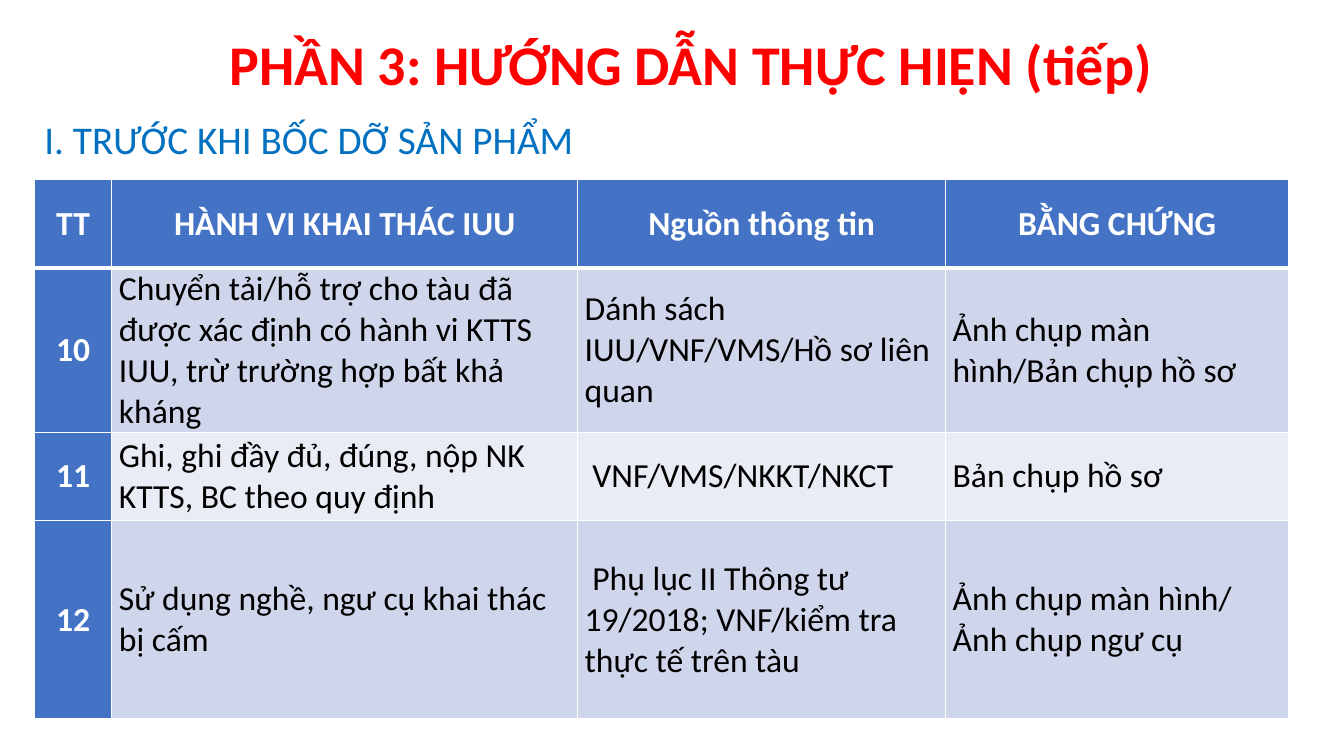
import pptx
import pptx.util
import pptx.dml.color
import pptx.enum.text
import pptx.oxml.ns
from lxml import etree
from pptx.util import Inches, Pt

COLORS = {
    "white": "FFFFFF", "black": "000000", "red": "FF0000", "sky": "0070C0",
    "blue": "4472C4", "dark": "CFD5EA", "light": "E9EBF5",
}
ALIGN = pptx.enum.text.PP_ALIGN
ANCHOR = pptx.enum.text.MSO_ANCHOR
COLS = [0.77, 4.62, 3.65, 3.4]
ROWS = [0.88, 1.48, 0.88, 1.96]
CELLS = [
    ["TT", "HÀNH VI KHAI THÁC IUU", "Nguồn thông tin", "BẰNG CHỨNG"],
    ["10", "Chuyển tải/hỗ trợ cho tàu đã được xác định có hành vi KTTS IUU, "
     "trừ trường hợp bất khả kháng",
     "Dánh sách IUU/VNF/VMS/Hồ sơ liên quan",
     "Ảnh chụp màn hình/Bản chụp hồ sơ"],
    ["11", "Ghi, ghi đầy đủ, đúng, nộp NK KTTS, BC theo quy định",
     " VNF/VMS/NKKT/NKCT", "Bản chụp hồ sơ"],
    ["12", "Sử dụng nghề, ngư cụ khai thác bị cấm",
     " Phụ lục II Thông tư 19/2018; VNF/kiểm tra thực tế trên tàu",
     "Ảnh chụp màn hình/ Ảnh chụp ngư cụ"],
]


def rgb(name):
    return pptx.dml.color.RGBColor.from_string(COLORS[name])


def write(frame, text, size=24, color="black", bold=False,
          align=ALIGN.LEFT, before=0, line=1.0):
    """Fill a text frame with one formatted paragraph and return it."""
    frame.word_wrap = True
    para = frame.paragraphs[0]
    para.alignment = align
    para.space_before = Pt(before)
    para.line_spacing = line
    run = para.add_run()
    run.text = text
    font = run.font
    font.name, font.size, font.bold = "Calibri", Pt(size), bold
    font.color.rgb = rgb(color)
    return para


def place(shape, left, top, width, height, anchor):
    shape.left, shape.top = Inches(left), Inches(top)
    shape.width, shape.height = Inches(width), Inches(height)
    shape.text_frame.auto_size = pptx.enum.text.MSO_AUTO_SIZE.NONE
    shape.text_frame.vertical_anchor = anchor


def plain(para):
    """Remove the bullet and its indent."""
    props = para._p.get_or_add_pPr()
    props.set("marL", "0")
    props.set("indent", "0")
    etree.SubElement(props, pptx.oxml.ns.qn("a:buNone"))


def border(cell, **widths):
    """Draw white cell sides, given as L, R, T and B in points."""
    qn = pptx.oxml.ns.qn
    props = cell._tc.get_or_add_tcPr()
    for side, width in widths.items():
        line = etree.SubElement(props, qn("a:ln" + side), w=str(Pt(width)))
        fill = etree.SubElement(line, qn("a:solidFill"))
        etree.SubElement(fill, qn("a:srgbClr"), val=COLORS["white"])


def grid(slide):
    table = slide.shapes.add_table(
        len(ROWS), len(COLS), Inches(0.34), Inches(1.78),
        Inches(sum(COLS)), Inches(sum(ROWS))).table
    table.first_col = True
    for col, width in zip(table.columns, COLS):
        col.width = Inches(width)
    for row, height in zip(table.rows, ROWS):
        row.height = Inches(height)
    for i, texts in enumerate(CELLS):
        for j, text in enumerate(texts):
            cell = table.cell(i, j)
            head = i == 0 or j == 0
            border(cell, L=1, R=1, T=3 if i == 1 else 1, B=3 if i == 0 else 1)
            cell.fill.solid()
            cell.fill.fore_color.rgb = rgb(
                "blue" if head else "dark" if i % 2 else "light")
            cell.margin_left = cell.margin_right = Inches(0.07 if i else 0.06)
            cell.margin_top = cell.margin_bottom = 0
            cell.vertical_anchor = ANCHOR.MIDDLE
            write(cell.text_frame, text, before=6, bold=head,
                  color="white" if head else "black",
                  align=ALIGN.CENTER if head else ALIGN.LEFT)


def main():
    deck = pptx.Presentation()
    deck.slide_width, deck.slide_height = Inches(13.33), Inches(7.5)
    slide = deck.slides.add_slide(deck.slide_layouts[1])
    title, body = slide.placeholders
    place(title, 1.1, 0.19, 11.5, 0.96, ANCHOR.MIDDLE)
    write(title.text_frame, "PHẦN 3: HƯỚNG DẪN THỰC HIỆN (tiếp)", size=40,
          color="red", bold=True, align=ALIGN.CENTER, line=0.9)
    place(body, 0.34, 1.15, 7.93, 0.66, ANCHOR.TOP)
    plain(write(body.text_frame, "I. TRƯỚC KHI BỐC DỠ SẢN PHẨM", size=28,
                color="sky", before=10, line=0.9))
    grid(slide)
    deck.save("out.pptx")


if __name__ == "__main__":
    main()
